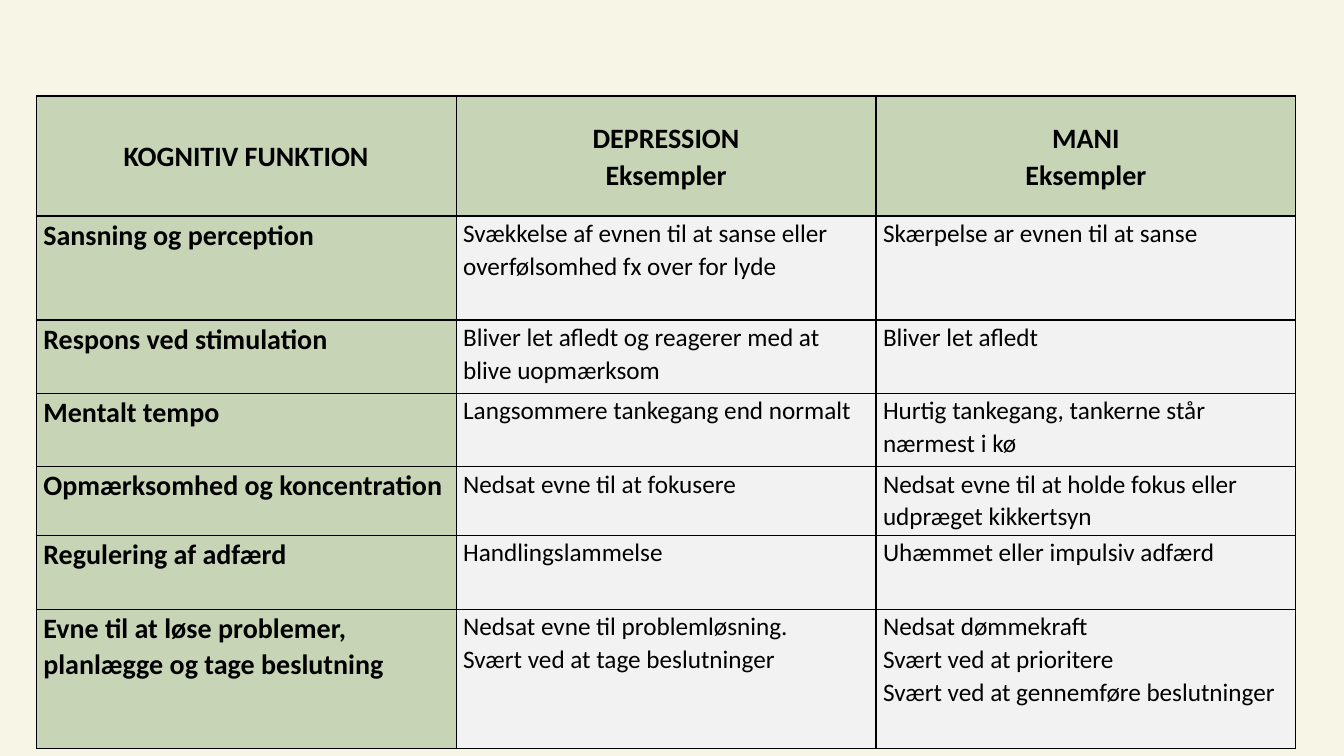
from dataclasses import dataclass

from lxml import etree
from pptx import Presentation
from pptx import util as u
from pptx.dml import color
from pptx.enum import text
from pptx.oxml import ns

COLOURS = {"page": "F7F6E6", "heading": "C7D5B6", "example": "F2F2F2", "ink": "000000"}
SLIDE_WIDTH, SLIDE_HEIGHT = u.Inches(13.33), u.Inches(7.5)
LEFT, TOP, WIDTH = 2.7, 12.7, 93.72
BORDER_SIDES = ("lnL", "lnR", "lnT", "lnB")


@dataclass(frozen=True)
class Row:
    height: float
    function: str
    depression: str
    mania: str


@dataclass(frozen=True)
class CellStyle:
    fill: str
    size: int
    bold: bool
    align: text.PP_ALIGN = text.PP_ALIGN.LEFT
    anchor: text.MSO_ANCHOR = text.MSO_ANCHOR.TOP


HEADER = CellStyle("heading", 20, True, text.PP_ALIGN.CENTER, text.MSO_ANCHOR.MIDDLE)
FUNCTION = CellStyle("heading", 20, True)
EXAMPLE = CellStyle("example", 18, False)

ROWS = [
    Row(15.87, "KOGNITIV FUNKTION", "DEPRESSION\nEksempler", "MANI\nEksempler"),
    Row(13.76, "Sansning og perception",
        "Svækkelse af evnen til at sanse eller overfølsomhed fx over for lyde",
        "Skærpelse ar evnen til at sanse"),
    Row(9.72, "Respons ved stimulation",
        "Bliver let afledt og reagerer med at blive uopmærksom",
        "Bliver let afledt"),
    Row(9.72, "Mentalt tempo",
        "Langsommere tankegang end normalt",
        "Hurtig tankegang, tankerne står nærmest i kø"),
    Row(9.1, "Opmærksomhed og koncentration",
        "Nedsat evne til at fokusere",
        "Nedsat evne til at holde fokus eller udpræget kikkertsyn"),
    Row(9.72, "Regulering af adfærd",
        "Handlingslammelse",
        "Uhæmmet eller impulsiv adfærd"),
    Row(18.4, "Evne til at løse problemer, planlægge og tage beslutning",
        "Nedsat evne til problemløsning.\nSvært ved at tage beslutninger",
        "Nedsat dømmekraft\nSvært ved at prioritere\nSvært ved at gennemføre beslutninger"),
]


def across(percent: float) -> int:
    return round(SLIDE_WIDTH * percent / 100)


def down(percent: float) -> int:
    return round(SLIDE_HEIGHT * percent / 100)


def rgb(name: str) -> color.RGBColor:
    return color.RGBColor.from_string(COLOURS[name])


def add_borders(cell) -> None:
    properties = cell._tc.get_or_add_tcPr()
    for side in BORDER_SIDES:
        line = etree.SubElement(properties, ns.qn(f"a:{side}"), w=str(u.Pt(1)))
        solid = etree.SubElement(line, ns.qn("a:solidFill"))
        etree.SubElement(solid, ns.qn("a:srgbClr"), val=COLOURS["ink"])


def fill_cell(cell, wording: str, style: CellStyle) -> None:
    add_borders(cell)
    cell.fill.solid()
    cell.fill.fore_color.rgb = rgb(style.fill)
    cell.margin_left = cell.margin_right = u.Inches(0.07)
    cell.margin_top = cell.margin_bottom = 0
    cell.vertical_anchor = style.anchor
    cell.text_frame.text = wording
    for paragraph in cell.text_frame.paragraphs:
        paragraph.alignment = style.align
        paragraph.line_spacing = 1.07
        paragraph.font.name = "Calibri"
        paragraph.font.size = u.Pt(style.size)
        paragraph.font.bold = style.bold
        paragraph.font.color.rgb = rgb("ink")


def add_comparison(slide, rows: list[Row]) -> None:
    height = sum(row.height for row in rows)
    comparison = slide.shapes.add_table(
        len(rows), 3, across(LEFT), down(TOP), across(WIDTH), down(height)).table
    comparison.first_row = comparison.horz_banding = False
    for column in comparison.columns:
        column.width = across(WIDTH / 3)
    for index, row in enumerate(rows):
        comparison.rows[index].height = down(row.height)
        styles = (FUNCTION, EXAMPLE, EXAMPLE) if index else (HEADER,) * 3
        wordings = (row.function, row.depression, row.mania)
        for cell, wording, style in zip(comparison.rows[index].cells, wordings, styles):
            fill_cell(cell, wording, style)


def main() -> None:
    deck = Presentation()
    deck.slide_width, deck.slide_height = SLIDE_WIDTH, SLIDE_HEIGHT
    slide = deck.slides.add_slide(deck.slide_layouts[6])
    slide.background.fill.solid()
    slide.background.fill.fore_color.rgb = rgb("page")
    add_comparison(slide, ROWS)
    deck.save("out.pptx")


if __name__ == "__main__":
    main()
